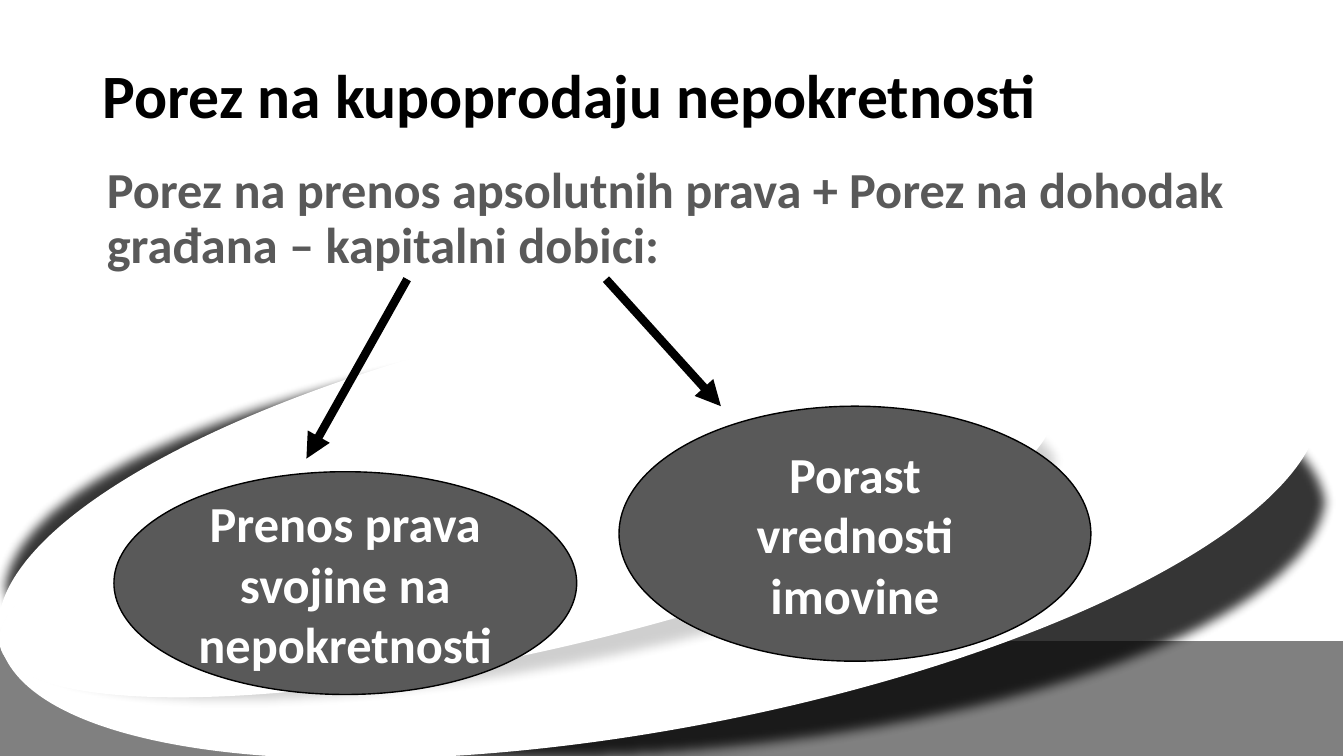
"""Build the slide on real estate sale taxes with two labelled ellipses."""
from dataclasses import dataclass

from lxml import etree
from pptx import Presentation
from pptx.dml.color import RGBColor
from pptx.enum.shapes import MSO_CONNECTOR, MSO_SHAPE
from pptx.enum.text import MSO_ANCHOR, MSO_AUTO_SIZE, PP_ALIGN
from pptx.oxml.ns import qn
from pptx.util import Emu, Inches, Pt

ELLIPSE, RECTANGLE = MSO_SHAPE.OVAL, MSO_SHAPE.RECTANGLE
STRAIGHT = MSO_CONNECTOR.STRAIGHT
TOP, MIDDLE = MSO_ANCHOR.TOP, MSO_ANCHOR.MIDDLE
LEFT, CENTER = PP_ALIGN.LEFT, PP_ALIGN.CENTER
FIXED_SIZE = MSO_AUTO_SIZE.NONE
WIDTH, HEIGHT = Inches(13.333), Inches(7.5)
FONT = "Calibri"
COLORS = {"black": "000000", "white": "FFFFFF", "band": "808080", "gray": "595959"}


@dataclass
class Box:
    """Hold a rectangle in percent of the slide's size."""
    left: float
    top: float
    width: float
    height: float

    def lengths(self) -> tuple[Emu, Emu, Emu, Emu]:
        """Return left, top, width and height as lengths."""
        return across(self.left), down(self.top), across(self.width), down(self.height)


@dataclass
class Backdrop:
    """Describe one background shape, softened when it has an opacity."""
    box: Box
    color: str
    kind: int = ELLIPSE
    rotation: float = 0
    opacity: int = 100


@dataclass
class Topic:
    """Describe a labelled ellipse and the arrow pointing to it."""
    label: str
    box: Box
    start: tuple[float, float]
    end: tuple[float, float]


BACKDROPS = [
    Backdrop(Box(-0.08, 84.8, 100, 16.13), "band", RECTANGLE),
    Backdrop(Box(-0.45, 43.2, 99.9, 57.6), "black", rotation=-4, opacity=79),
    Backdrop(Box(-0.9, 40.27, 99.92, 56.13), "white", rotation=-10.6),
    Backdrop(Box(-0.98, 55.33, 81, 34.67), "black", rotation=-10, opacity=19),
    Backdrop(Box(-0.98, 53.33, 80.2, 32.93), "white", rotation=-12.7),
]
TOPICS = [
    Topic("Prenos prava svojine na nepokretnosti",
          Box(8.48, 62.4, 34.43, 29.47), (30.3, 36.93), (22.8, 60.67)),
    Topic("Porast vrednosti imovine",
          Box(46.06, 53.73, 35.11, 33.73), (45.09, 36.93), (53.64, 53.73)),
]


def across(percent: float) -> Emu:
    """Return a share of the slide's width."""
    return Emu(round(WIDTH * percent / 100))


def down(percent: float) -> Emu:
    """Return a share of the slide's height."""
    return Emu(round(HEIGHT * percent / 100))


def rgb(name: str) -> RGBColor:
    """Return a named colour."""
    return RGBColor.from_string(COLORS[name])


def write(shape, text: str, size: int, color: str, anchor, alignment, spacing: float) -> None:
    """Write one bold paragraph into a shape."""
    frame = shape.text_frame
    frame.word_wrap = True
    frame.auto_size = FIXED_SIZE
    frame.vertical_anchor = anchor
    paragraph = frame.paragraphs[0]
    paragraph.alignment = alignment
    paragraph.line_spacing = spacing
    paragraph.space_before = Pt(0)
    run = paragraph.add_run()
    run.text = text
    run.font.name = FONT
    run.font.size = Pt(size)
    run.font.bold = True
    run.font.color.rgb = rgb(color)


def add_filled_shape(slide, kind: int, box: Box, color: str):
    """Add a filled shape without a shadow."""
    shape = slide.shapes.add_shape(kind, *box.lengths())
    shape.shadow.inherit = False
    shape.fill.solid()
    shape.fill.fore_color.rgb = rgb(color)
    return shape


def add_backdrop(slide, backdrop: Backdrop) -> None:
    """Add one background shape."""
    shape = add_filled_shape(slide, backdrop.kind, backdrop.box, backdrop.color)
    shape.line.fill.background()
    shape.rotation = backdrop.rotation
    if backdrop.opacity < 100:
        properties = shape._element.spPr
        color = properties.find(qn("a:solidFill"))[0]
        etree.SubElement(color, qn("a:alpha"), val=str(backdrop.opacity * 1000))
        effects = properties.find(qn("a:effectLst"))
        etree.SubElement(effects, qn("a:softEdge"), rad=str(Pt(8)))


def place_placeholder(slide, shape, box: Box) -> None:
    """Position a placeholder in front of the background."""
    shape.left, shape.top, shape.width, shape.height = box.lengths()
    slide.shapes._spTree.append(shape._element)


def add_topic(slide, topic: Topic) -> None:
    """Add an arrow and its labelled ellipse."""
    arrow = slide.shapes.add_connector(
        STRAIGHT, across(topic.start[0]), down(topic.start[1]),
        across(topic.end[0]), down(topic.end[1]))
    arrow.line.color.rgb = rgb("black")
    arrow.line.width = Pt(6)
    etree.SubElement(arrow.line._get_or_add_ln(), qn("a:tailEnd"), type="triangle")
    etree.SubElement(arrow._element.spPr, qn("a:effectLst"))
    ellipse = add_filled_shape(slide, ELLIPSE, topic.box, "gray")
    ellipse.line.color.rgb = rgb("black")
    ellipse.line.width = Pt(1)
    write(ellipse, topic.label, 36, "white", MIDDLE, CENTER, 1.0)


def main() -> None:
    """Build and save the presentation."""
    presentation = Presentation()
    presentation.slide_width, presentation.slide_height = WIDTH, HEIGHT
    slide = presentation.slides.add_slide(presentation.slide_layouts[1])
    for backdrop in BACKDROPS:
        add_backdrop(slide, backdrop)

    title, body = slide.shapes.title, slide.placeholders[1]
    place_placeholder(slide, title, Box(6.9, 8.13, 86.27, 9.73))
    write(title, "Porez na kupoprodaju nepokretnosti", 44, "black", MIDDLE, LEFT, 0.9)
    place_placeholder(slide, body, Box(7.2, 21.2, 86.27, 67.47))
    properties = body.text_frame.paragraphs[0]._p.get_or_add_pPr()
    properties.set("marL", "0")
    properties.set("indent", "0")
    etree.SubElement(properties, qn("a:buNone"))
    write(body, "Porez na prenos apsolutnih prava + Porez na dohodak građana – kapitalni dobici:",
          36, "gray", TOP, LEFT, 0.9)

    for topic in TOPICS:
        add_topic(slide, topic)
    presentation.save("out.pptx")


if __name__ == "__main__":
    main()
